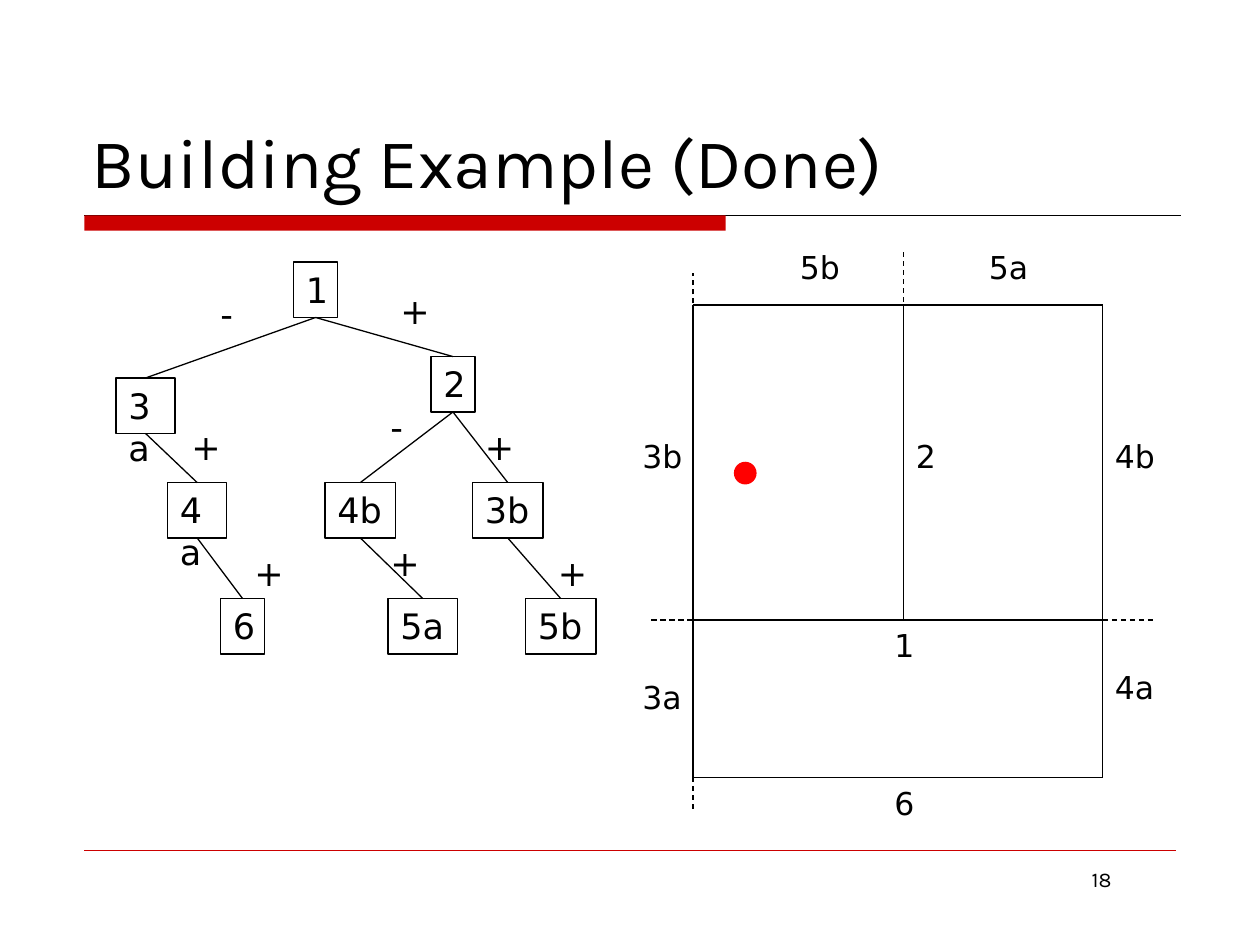
from dataclasses import dataclass
from lxml.etree import SubElement as Sub
from pptx import Presentation
from pptx.dml.color import RGBColor as RGB
from pptx.enum.dml import MSO_LINE
from pptx.enum.shapes import MSO_CONNECTOR as Link, MSO_SHAPE as Kind
from pptx.enum.text import MSO_ANCHOR as Anchor, MSO_AUTO_SIZE as Fit, PP_ALIGN as Align
from pptx.oxml.ns import qn
from pptx.util import Pt

PX = 9144  # 100 px to the inch


@dataclass(frozen=True)
class Theme:
    ink: RGB = RGB(0, 0, 0)
    bar: RGB = RGB(0xCC, 0, 0)
    dot: RGB = RGB(0xFF, 0, 0)
    head: str = "Karla"
    body: str = "DejaVu Sans"
    title: int = 40
    node: int = 20
    label: int = 18
    foot: int = 12
    line: float = 0.75
    hair: float = 0.25


def put(item, vals):
    for name, val in vals.items():
        setattr(item, name, val)


class Deck:
    def __init__(self, theme):
        self.theme = theme
        self.prs = Presentation()
        put(self.prs, {"slide_width": 1000 * PX, "slide_height": 750 * PX})
        self.slide = self.prs.slides.add_slide(self.prs.slide_layouts[5])
        self.shapes = self.slide.shapes

    def fill_in(self, shape, text, size, face=None, align=Align.LEFT, **opts):
        frame = shape.text_frame
        frame.text = text
        put(frame, {"word_wrap": False, "auto_size": Fit.SHAPE_TO_FIT_TEXT,
                    "vertical_anchor": Anchor.TOP, **opts})
        para = frame.paragraphs[0]
        para.alignment = align
        font = para.runs[0].font
        put(font, {"size": Pt(size), "name": face or self.theme.body})
        font.color.rgb = self.theme.ink

    def title(self, text, x, y, w, h):
        shape = self.shapes.title
        put(shape, {"left": x * PX, "top": y * PX, "width": w * PX, "height": h * PX})
        self.fill_in(shape, text, self.theme.title, self.theme.head, word_wrap=True,
                     auto_size=Fit.NONE, vertical_anchor=Anchor.BOTTOM)

    def text(self, text, x, y, w, h, size, **opts):
        box = self.shapes.add_textbox(x * PX, y * PX, w * PX, h * PX)
        self.fill_in(box, text, size, **opts)

    def shape(self, kind, x, y, w, h, fill=None, line=None):
        shape = self.shapes.add_shape(kind, x * PX, y * PX, w * PX, h * PX)
        shape.shadow.inherit = False
        if fill is None:
            shape.fill.background()
        else:
            shape.fill.solid()
            shape.fill.fore_color.rgb = fill
        if line is None:
            shape.line.fill.background()
        else:
            shape.line.color.rgb = line
            shape.line.width = Pt(self.theme.line)
        return shape

    def node(self, text, x, y, w, wrap):
        box = self.shape(Kind.RECTANGLE, x, y, w, 44, line=self.theme.ink)
        fit = Fit.NONE if wrap else Fit.SHAPE_TO_FIT_TEXT
        self.fill_in(box, text, self.theme.node, word_wrap=wrap, auto_size=fit)
        return box

    def line(self, x1, y1, x2, y2, color=None, width=None, dash=False):
        line = self.shapes.add_connector(
            Link.STRAIGHT, x1 * PX, y1 * PX, x2 * PX, y2 * PX)
        line.line.color.rgb = color or self.theme.ink
        line.line.width = Pt(width or self.theme.line)
        if dash:
            line.line.dash_style = MSO_LINE.DASH
        Sub(line._element.spPr, qn("a:effectLst"))
        return line

    def edge(self, top, low):
        line = self.line(0, 0, 0, 0)
        line.begin_connect(top, 2)
        line.end_connect(low, 0)

    def save(self):
        self.prs.save("out.pptx")


# Tree: label, left, top, width, wrapped
NODES = [
    ("1", 233, 208, 35, False), ("2", 342, 283, 35, False),
    ("3a", 92, 300, 47, True), ("4a", 133, 383, 47, True),
    ("4b", 258, 383, 56, False), ("3b", 375, 383, 56, False),
    ("6", 175, 475, 35, False), ("5a", 308, 475, 55, False),
    ("5b", 417, 475, 56, False),
]
EDGES = [("1", "3a"), ("1", "2"), ("3a", "4a"), ("4a", "6"),
         ("2", "4b"), ("2", "3b"), ("4b", "5a"), ("3b", "5b")]
SIGNS = [("-", 165, 227), ("+", 308, 225), ("-", 300, 317), ("+", 375, 333),
         ("+", 142, 333), ("+", 300, 425), ("+", 192, 433), ("+", 433, 433)]

# Plan: frame sides, inner walls and the names of the walls
LEFT, RIGHT, TOP, LOW, MID, WALL = 550, 875, 242, 617, 492, 717
WALLS = [(LEFT, TOP, RIGHT, TOP), (LEFT, TOP, LEFT, LOW), (LEFT, LOW, RIGHT, LOW),
         (RIGHT, TOP, RIGHT, LOW), (LEFT, MID, RIGHT, MID), (WALL, TOP, WALL, MID)]
CUTS = [(517, MID, 917, MID), (WALL, 200, WALL, MID), (LEFT, 642, LEFT, 217)]
NAMES = [("1", 700, MID), ("2", WALL, 342), ("3b", 500, 342), ("4b", RIGHT, 342),
         ("5a", 775, 192), ("5b", 625, 192), ("4a", RIGHT, 525),
         ("3a", 500, 533), ("6", 700, LOW)]


def main():
    theme = Theme()
    deck = Deck(theme)

    # Title and rules
    deck.line(67, 171, 937, 171)
    deck.shape(Kind.RECTANGLE, 67, 171, 509, 12, fill=theme.bar)
    deck.line(67, 675, 933, 675, color=theme.bar, width=theme.hair)
    deck.title("Building Example (Done)", 63, 33, 875, 133)

    # Floor plan
    for wall in WALLS:
        deck.line(*wall)
    for cut in CUTS:
        deck.line(*cut, dash=True)
    for name, x, y in NAMES:
        deck.text(name, x, y, 37 if len(name) == 1 else 53, 50, theme.label)
    deck.shape(Kind.OVAL, 583, 367, 17, 17, fill=theme.dot, line=theme.dot)

    # Tree
    boxes = {node[0]: deck.node(*node) for node in NODES}
    for top, low in EDGES:
        deck.edge(boxes[top], boxes[low])
    for sign, x, y in SIGNS:
        deck.text(sign, x, y, 29 if sign == "-" else 36, 43, theme.node)

    # Page number
    deck.text("18", 675, 683, 217, 52, theme.foot, face=theme.head,
              align=Align.RIGHT, word_wrap=True, auto_size=Fit.NONE)
    deck.save()


if __name__ == "__main__":
    main()
